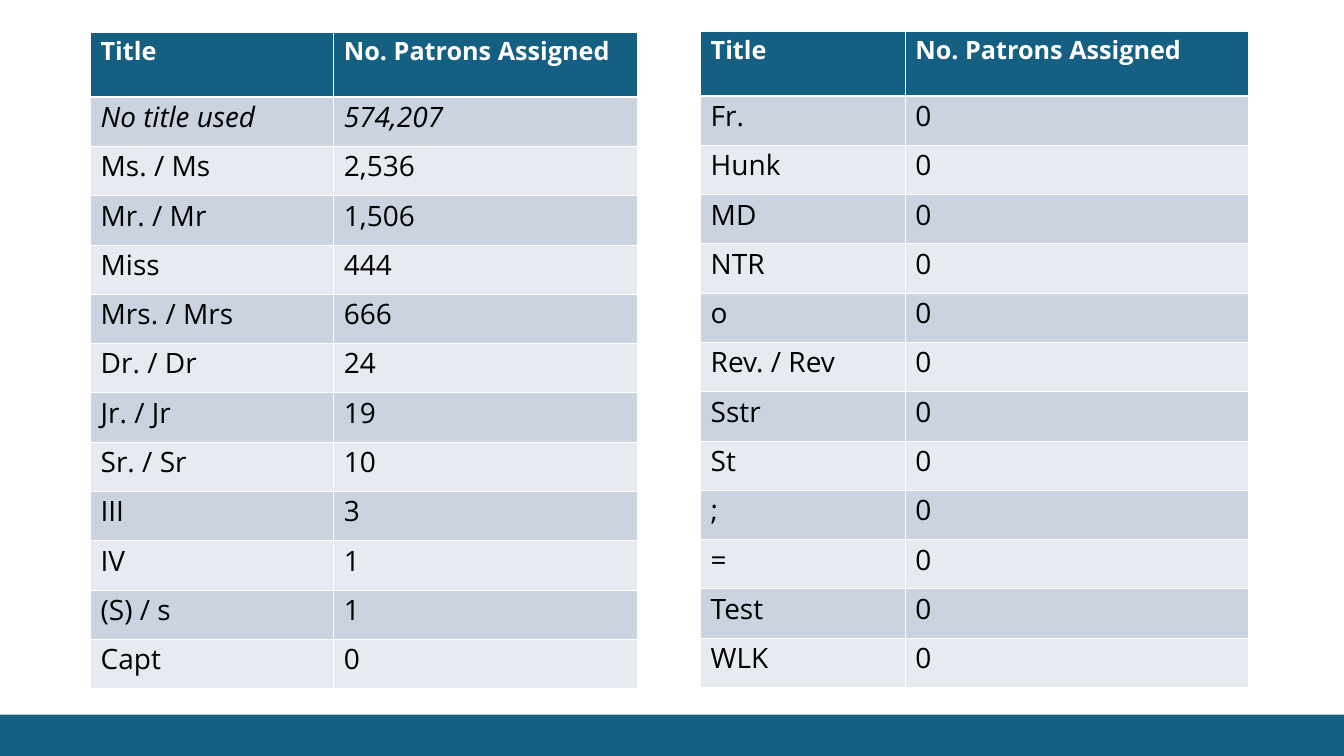
from dataclasses import dataclass

from lxml import etree
from pptx import Presentation, util as u
from pptx.dml.color import RGBColor
from pptx.enum import shapes
from pptx.oxml import ns


@dataclass(frozen=True)
class Theme:
    font: str = "Open Sans"
    accent: str = "156082"
    light: str = "FFFFFF"
    dark: str = "000000"
    bands: tuple = ("CBD3E0", "E7EAF0")
    header_size: float = 18
    header_spacing: float = 21.8
    body_size: float = 20
    body_spacing: float = 24
    rule: float = 0.75
    header_rule: float = 1.37


class SlideBuilder:
    """Draws on one slide; every length is a percentage of its width or height."""

    def __init__(self, presentation, theme):
        self.presentation = presentation
        self.theme = theme
        self.slide = presentation.slides.add_slide(presentation.slide_layouts[6])

    def across(self, share):
        return round(self.presentation.slide_width * share / 100)

    def down(self, share):
        return round(self.presentation.slide_height * share / 100)

    def add_band(self, top):
        """Fill the slide from top to its lower edge with the accent colour."""
        band = self.slide.shapes.add_shape(
            shapes.MSO_SHAPE.RECTANGLE, 0, self.down(top),
            self.across(100), self.down(100 - top))
        band.shadow.inherit = False
        band.fill.solid()
        band.fill.fore_color.rgb = RGBColor.from_string(self.theme.accent)
        band.line.fill.background()

    def add_table(self, left, top, widths, header_height, row_height, rows, italic_rows=()):
        heights = [header_height] + [row_height] * (len(rows) - 1)
        table = self.slide.shapes.add_table(
            len(rows), len(widths), self.across(left), self.down(top),
            self.across(sum(widths)), self.down(sum(heights))).table
        table.horz_banding = False
        for column, width in zip(table.columns, widths):
            column.width = self.across(width)
        for index, (row, height, values) in enumerate(zip(table.rows, heights, rows)):
            row.height = self.down(height)
            for cell, value in zip(row.cells, values):
                self.fill_cell(cell, index)
                self.write_cell(cell, value, index == 0, index in italic_rows)

    def fill_cell(self, cell, row_index):
        theme = self.theme
        color = theme.bands[(row_index - 1) % 2] if row_index else theme.accent
        cell.fill.solid()
        cell.fill.fore_color.rgb = RGBColor.from_string(color)
        rules = {"lnL": theme.rule, "lnR": theme.rule,
                 "lnT": theme.header_rule if row_index == 1 else theme.rule,
                 "lnB": theme.header_rule if row_index == 0 else theme.rule}
        properties = cell._tc.get_or_add_tcPr()
        for position, (edge, width) in enumerate(rules.items()):
            line = etree.Element(ns.qn(f"a:{edge}"), w=str(u.Pt(width)))
            fill = etree.SubElement(line, ns.qn("a:solidFill"))
            etree.SubElement(fill, ns.qn("a:srgbClr"), val=theme.light)
            properties.insert(position, line)

    def write_cell(self, cell, value, header, italic):
        theme = self.theme
        paragraph = cell.text_frame.paragraphs[0]
        paragraph.line_spacing = u.Pt(theme.header_spacing if header else theme.body_spacing)
        run = paragraph.add_run()
        run.text = value
        run.font.name = theme.font
        run.font.size = u.Pt(theme.header_size if header else theme.body_size)
        run.font.bold = header
        run.font.italic = italic
        run.font.color.rgb = RGBColor.from_string(theme.light if header else theme.dark)


HEADER = ("Title", "No. Patrons Assigned")
USED_TITLES = [
    ("No title used", "574,207"),
    ("Ms. / Ms", "2,536"),
    ("Mr. / Mr", "1,506"),
    ("Miss", "444"),
    ("Mrs. / Mrs", "666"),
    ("Dr. / Dr", "24"),
    ("Jr. / Jr", "19"),
    ("Sr. / Sr", "10"),
    ("III", "3"),
    ("IV", "1"),
    ("(S) / s", "1"),
    ("Capt", "0"),
]
UNUSED_TITLES = ["Fr.", "Hunk", "MD", "NTR", "o", "Rev. / Rev",
                 "Sstr", "St", ";", "=", "Test", "WLK"]


def main():
    presentation = Presentation()
    presentation.slide_width = u.Inches(13.33)
    presentation.slide_height = u.Inches(7.5)
    builder = SlideBuilder(presentation, Theme())
    builder.add_band(top=94.53)
    builder.add_table(6.74, 4.3, (18.1, 22.6), 8.55, 6.52,
                      [HEADER, *USED_TITLES], italic_rows=(1,))
    builder.add_table(52.13, 4.15, (15.23, 25.5), 8.55, 6.52,
                      [HEADER, *((title, "0") for title in UNUSED_TITLES)])
    presentation.save("out.pptx")


if __name__ == "__main__":
    main()
